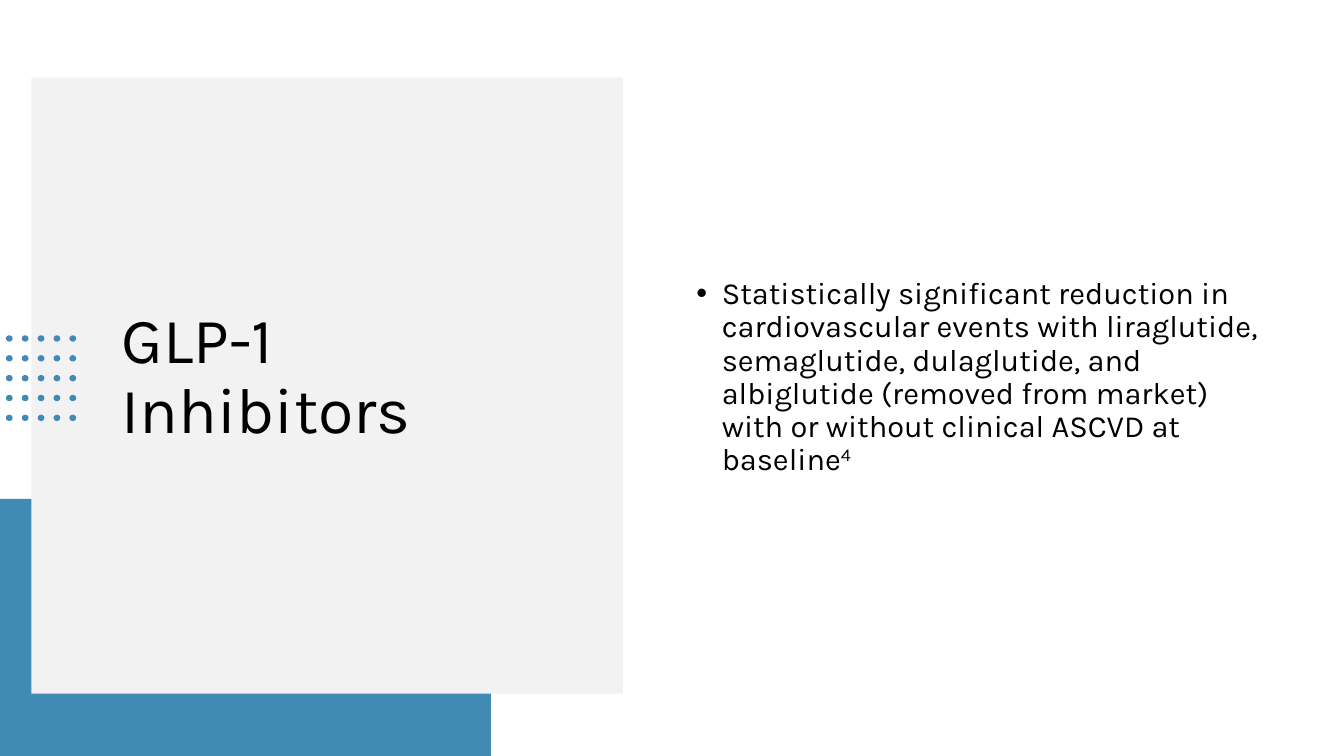
import pptx
import pptx.util
import pptx.dml.color
import pptx.enum.shapes
import pptx.enum.text
import pptx.oxml
import pptx.oxml.ns

Cm = pptx.util.Cm
Pt = pptx.util.Pt
SHAPES = pptx.enum.shapes.MSO_SHAPE
BLUE, GREY, BLACK = "418AB3", "F2F2F2", "000000"


def add_filled(shapes, kind, place, color):
    shape = shapes.add_shape(kind, *map(Cm, place))
    shape.shadow.inherit = False
    shape.fill.solid()
    shape.fill.fore_color.rgb = pptx.dml.color.RGBColor.from_string(color)
    shape.line.fill.background()
    return shape


def write_text(box, place, size, texts):
    box.left, box.top, box.width, box.height = map(Cm, place)
    frame_format = {
        "word_wrap": True,
        "auto_size": pptx.enum.text.MSO_AUTO_SIZE.NONE,
        "vertical_anchor": pptx.enum.text.MSO_ANCHOR.MIDDLE,
    }
    for name, value in frame_format.items():
        setattr(box.text_frame, name, value)
    para = box.text_frame.paragraphs[0]
    para.alignment = pptx.enum.text.PP_ALIGN.LEFT
    para.line_spacing = 0.9
    for text in texts:
        span = para.add_run()
        span.text = text
        for name, value in {"name": "Karla", "size": Pt(size)}.items():
            setattr(span.font, name, value)
        span.font.color.rgb = pptx.dml.color.RGBColor.from_string(BLACK)
    return para


deck = pptx.Presentation()
deck.slide_width, deck.slide_height = Cm(33.87), Cm(19.05)
page = deck.slides.add_slide(deck.slide_layouts[5])

add_filled(page.shapes, SHAPES.RECTANGLE, (0, 12.57, 12.37, 6.48), BLUE)
panel = add_filled(page.shapes, SHAPES.RECTANGLE, (0.79, 1.96, 14.91, 15.52), GREY)

title = page.shapes.title
panel.element.addnext(title.element)
write_text(title, (2.82, 3.73, 11.66, 11.58), 46, ["GLP-1 Inhibitors"])

dots = page.shapes.add_group_shape()
for column in range(5):
    for row in range(5):
        place = (0.15 + 0.4 * column, 8.45 + 0.5 * row, 0.17, 0.16)
        add_filled(dots.shapes, SHAPES.OVAL, place, BLUE)

body_place = (17.3, 2.08, 14.91, 14.88)
body = page.shapes.add_textbox(*map(Cm, body_place))
finding = write_text(body, body_place, 22, [
    "Statistically significant reduction in cardiovascular events with "
    "liraglutide, semaglutide, dulaglutide, and albiglutide (removed from "
    "market) with or without clinical ASCVD at baseline",
    "4",
])
finding.space_before = Pt(10)
finding.runs[1].font._element.set("baseline", "30000")

properties = finding._p.get_or_add_pPr()
properties.set("marL", str(Cm(0.64)))
properties.set("indent", str(Cm(-0.64)))
for tag, name, value in (("a:buFont", "typeface", "Arial"), ("a:buChar", "char", "•")):
    bullet = pptx.oxml.parse_xml(f"<{tag} {pptx.oxml.ns.nsdecls('a')}/>")
    bullet.set(name, value)
    properties.append(bullet)

deck.save("out.pptx")
